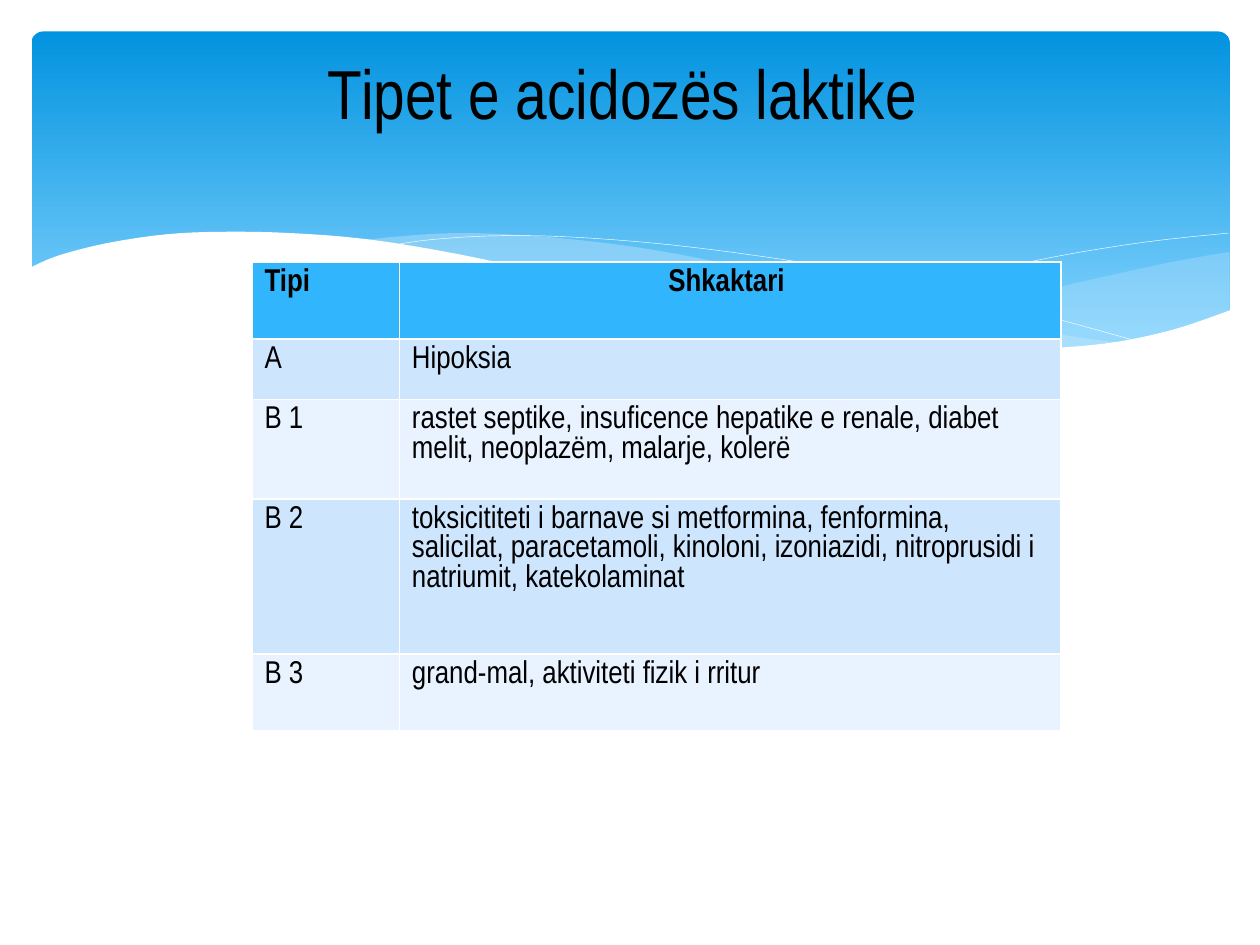
from lxml.etree import SubElement
from pptx import Presentation
from pptx.dml.color import RGBColor
from pptx.enum.shapes import MSO_SHAPE
from pptx.enum.text import MSO_ANCHOR, PP_ALIGN
from pptx.oxml.ns import qn
from pptx.util import Inches, Pt

FONT = "Arial Narrow"
BLACK = RGBColor(0x00, 0x00, 0x00)
WHITE = RGBColor(0xFF, 0xFF, 0xFF)
SKY_TOP = RGBColor(0x02, 0x93, 0xE0)
SKY_LOW = RGBColor(0x83, 0xD3, 0xFE)
MIST = RGBColor(0xC6, 0xE7, 0xFC)
HEADER = RGBColor(0x31, 0xB6, 0xFD)
BANDS = [RGBColor(0xE8, 0xF3, 0xFF), RGBColor(0xCE, 0xE5, 0xFE)]

TITLE = "Tipet e acidozës laktike"
ROWS = [
    ("Tipi", "Shkaktari "),
    ("A", "Hipoksia"),
    ("B 1", "rastet septike, insuficence hepatike e renale, diabet melit, "
            "neoplazëm, malarje, kolerë"),
    ("B 2", "toksicititeti i barnave si metformina, fenformina, salicilat, "
            "paracetamoli, kinoloni, izoniazidi, nitroprusidi i natriumit, katekolaminat"),
    ("B 3", "grand-mal, aktiviteti fizik i rritur"),
]
COL_WIDTHS = [1.17, 5.25]
ROW_HEIGHTS = [0.61, 0.48, 0.79, 1.23, 0.61]

RIGHT_WAVE = [
    [(9.76, 2), (9.35, 2.07), (8.61, 2.23), (7.53, 2.48), (6.61, 2.65)],
    [(6.61, 2.65), (7.19, 2.72), (7.69, 2.77), (8.14, 2.78), (8.63, 2.75),
     (9.05, 2.69), (9.42, 2.59), (9.76, 2.47)],
]
MIDDLE_WAVE = [
    [(8.93, 2.73), (8.07, 2.6), (7.06, 2.4), (6.29, 2.22), (5.55, 2.05),
     (4.89, 1.94), (4.2, 1.87), (3.61, 1.85), (3.13, 1.88), (2.86, 1.91)],
    [(2.86, 1.91), (3.62, 2.03), (4.49, 2.22), (5.66, 2.48), (6.5, 2.64),
     (7.22, 2.74), (7.85, 2.78), (8.38, 2.78), (8.93, 2.73)],
]
FALLING_LINE = [[(3.09, 1.95), (3.44, 1.9), (4.01, 1.87), (4.69, 1.89), (5.56, 1.97),
                 (6.65, 2.13), (7.6, 2.33), (8.31, 2.51), (9.07, 2.72)]]
RISING_LINE = [[(6.13, 2.57), (6.72, 2.41), (7.48, 2.23), (8.36, 2.04),
                (9.1, 1.92), (9.75, 1.85)]]
FRONT_WAVE = [
    [(9.77, 2.46), (9.3, 2.62), (8.75, 2.73), (8.09, 2.77), (7.44, 2.74), (6.68, 2.65),
     (5.79, 2.5), (4.47, 2.2), (3.65, 2.02), (2.92, 1.9), (2.3, 1.85), (1.77, 1.84),
     (1.32, 1.86), (0.85, 1.93), (0.46, 2.03), (0.23, 2.13)],
    [(0.23, 3.29), (9.77, 3.29)],
]
WAVES = [(RIGHT_WAVE, MIST, 29), (MIDDLE_WAVE, MIST, 40), (FALLING_LINE, None, 100),
         (RISING_LINE, None, 100), (FRONT_WAVE, WHITE, 100)]


def smooth(knots, steps=4):
    """Return points of a Catmull-Rom curve through the knots."""
    if len(knots) < 3:
        return knots
    ends = [knots[0], *knots, knots[-1]]
    pts = []
    for a, b, c, d in zip(ends, ends[1:], ends[2:], ends[3:]):
        for t in (i / steps for i in range(steps)):
            pts.append(tuple(
                (2 * q + (r - p) * t + (2 * p - 5 * q + 4 * r - u) * t ** 2
                 + (3 * q - p - 3 * r + u) * t ** 3) / 2
                for p, q, r, u in zip(a, b, c, d)))
    return pts + [knots[-1]]


def add_wave(s, edges, color, opacity):
    """Draw a filled wave, or a white hairline when there is no color."""
    pts = [(Inches(x), Inches(y)) for edge in edges for x, y in smooth(edge)]
    fb = s.shapes.build_freeform(*pts[0])
    fb.add_line_segments(pts[1:], close=color is not None)
    sp = fb.convert_to_shape()
    sp.shadow.inherit = False
    if color is None:
        sp.fill.background()
        sp.line.color.rgb = WHITE
        sp.line.width = Pt(0.25)
        return
    sp.fill.solid()
    sp.fill.fore_color.rgb = color
    sp.line.fill.background()
    if opacity < 100:
        clr = sp._element.spPr.find(qn("a:solidFill")).find(qn("a:srgbClr"))
        SubElement(clr, qn("a:alpha")).set("val", str(opacity * 1000))


def format_text(p, size, bold=False):
    """Apply the slide's font to every run of a paragraph."""
    for r in p.runs:
        r.font.name, r.font.size, r.font.bold = FONT, Pt(size), bold
        r.font.color.rgb = BLACK


def add_sky(s):
    """Draw the gradient panel behind the title."""
    sp = s.shapes.add_shape(MSO_SHAPE.ROUNDED_RECTANGLE, Inches(0.25), Inches(0.25),
                            Inches(9.51), Inches(2.7))
    sp.adjustments[0] = 0.034
    sp.shadow.inherit = False
    sp.line.fill.background()
    sp.fill.gradient()
    sp.fill.gradient_angle = 270
    for stop, color, pos in zip(sp.fill.gradient_stops, (SKY_TOP, SKY_LOW), (0, 0.9)):
        stop.color.rgb, stop.position = color, pos


def add_types_table(s):
    """Add the table of types and causes."""
    tbl = s.shapes.add_table(len(ROWS), len(COL_WIDTHS), Inches(2), Inches(2.08),
                             Inches(sum(COL_WIDTHS)), Inches(sum(ROW_HEIGHTS))).table
    for col, w in zip(tbl.columns, COL_WIDTHS):
        col.width = Inches(w)
    for i, (row, h) in enumerate(zip(tbl.rows, ROW_HEIGHTS)):
        row.height = Inches(h)
        for j, cell in enumerate(row.cells):
            cell.fill.solid()
            cell.fill.fore_color.rgb = BANDS[i % 2] if i else HEADER
            p = cell.text_frame.paragraphs[0]
            p.text = ROWS[i][j]
            p.alignment = PP_ALIGN.CENTER if (i, j) == (0, 1) else PP_ALIGN.LEFT
            format_text(p, 18, bold=i == 0)


def add_title(s):
    """Fill the title placeholder and bring it to the front."""
    sp = s.shapes.title
    sp.left, sp.top, sp.width, sp.height = map(Inches, (0.5, 0.37, 9, 1.37))
    tf = sp.text_frame
    tf.text = TITLE
    tf.word_wrap = True
    tf.vertical_anchor = MSO_ANCHOR.TOP
    tf.margin_top, tf.margin_right = Inches(0.03), Inches(0.22)
    p = tf.paragraphs[0]
    p.alignment = PP_ALIGN.CENTER
    format_text(p, 39.6)
    s.shapes._spTree.append(sp._element)


def main():
    """Build the slide and save it."""
    prs = Presentation()
    prs.slide_width, prs.slide_height = Inches(10), Inches(7.5)
    s = prs.slides.add_slide(prs.slide_layouts[5])
    add_sky(s)
    for wave in WAVES:
        add_wave(s, *wave)
    add_types_table(s)
    add_title(s)
    prs.save("out.pptx")


if __name__ == "__main__":
    main()
